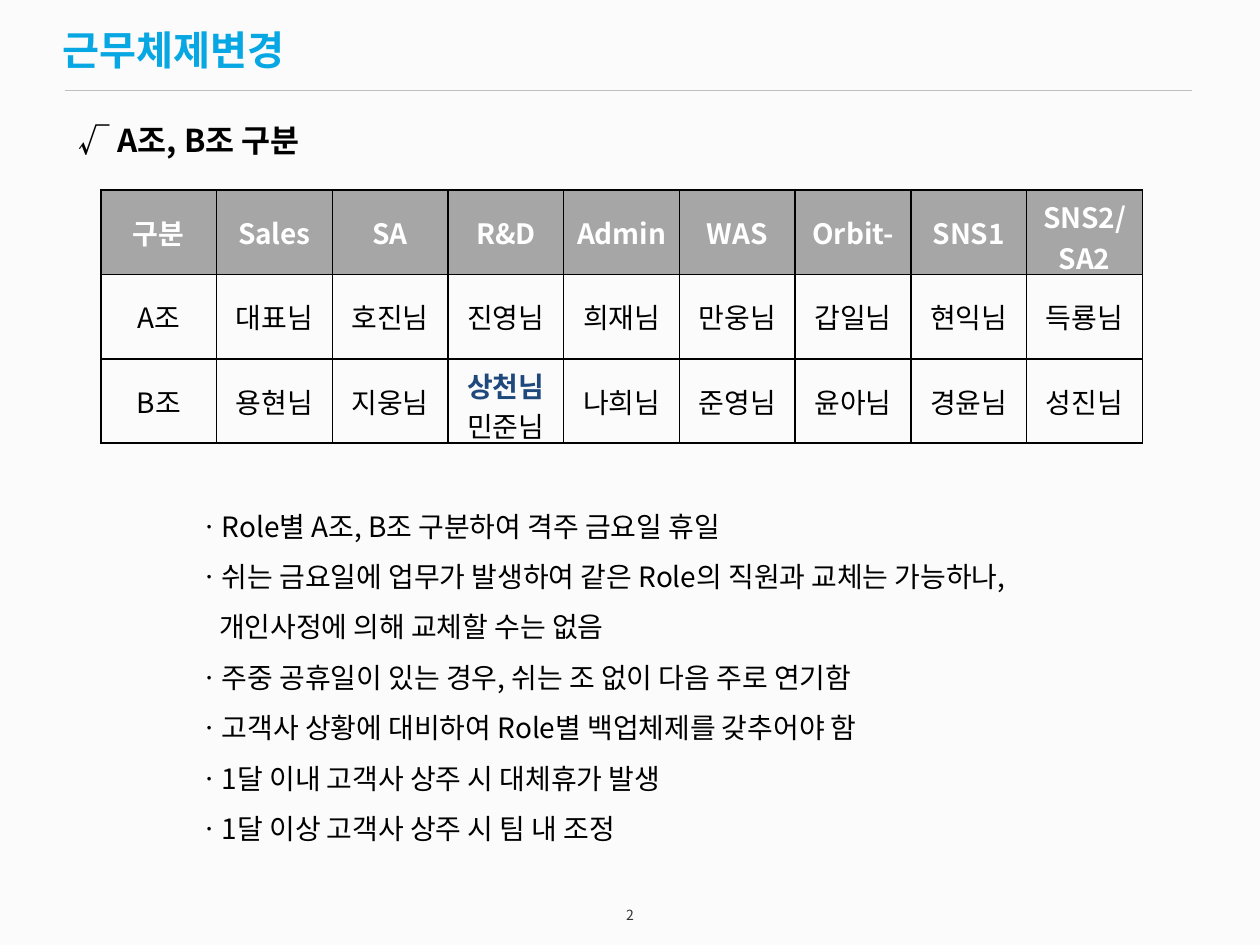
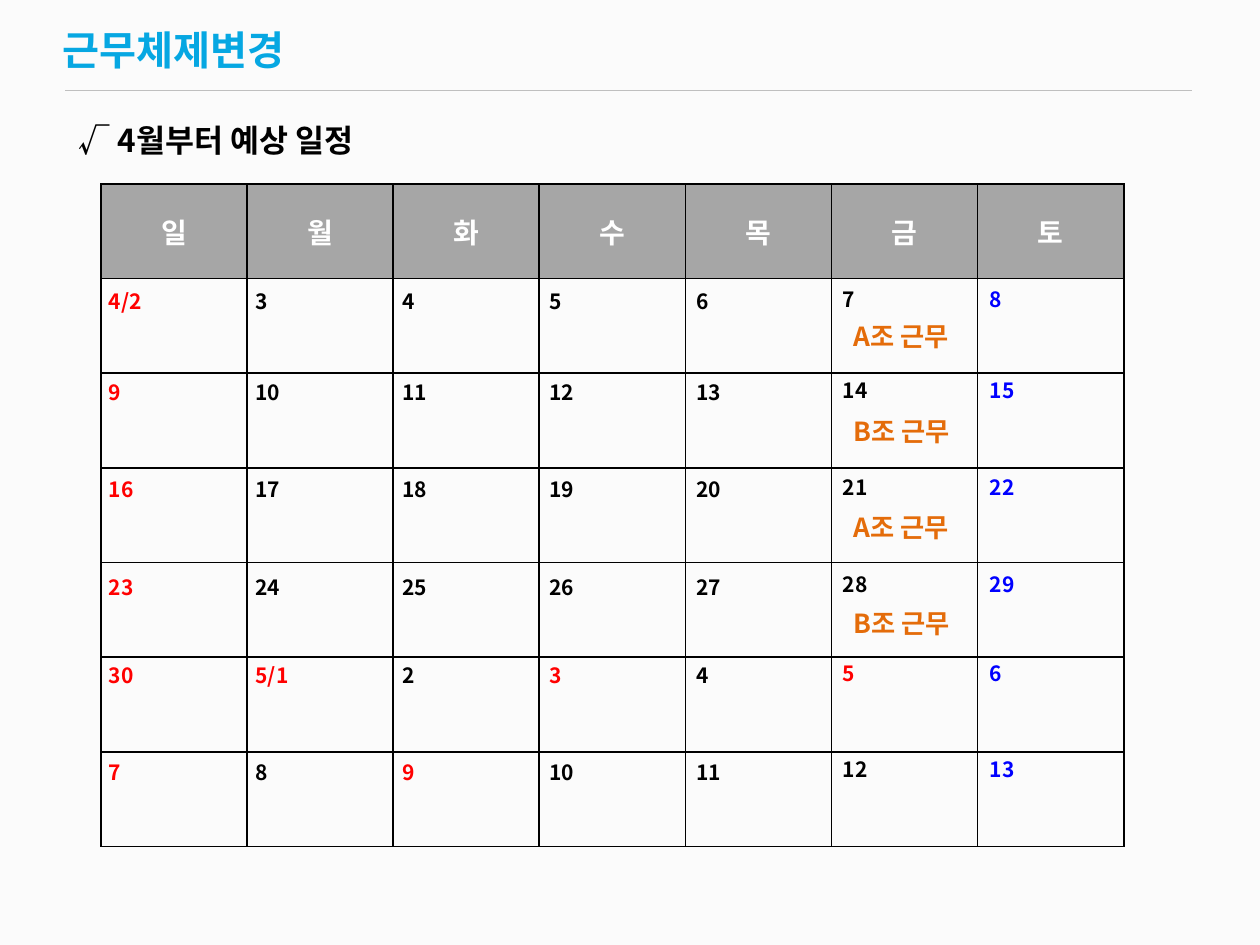
from lxml import etree
from pptx import Presentation
from pptx.dml.color import RGBColor
from pptx.enum.shapes import MSO_CONNECTOR
from pptx.enum.text import MSO_ANCHOR, PP_ALIGN
from pptx.oxml.ns import qn
from pptx.util import Pt

STRAIGHT = MSO_CONNECTOR.STRAIGHT
TOP, MIDDLE = MSO_ANCHOR.TOP, MSO_ANCHOR.MIDDLE
LEFT, CENTER = PP_ALIGN.LEFT, PP_ALIGN.CENTER

FONT = "Noto Sans CJK KR"
BACKGROUND, RULE, TITLE, HEADER = "FBFBFB", "BFBFBF", "06A7E2", "A6A6A6"
BLACK, WHITE, GRAY, NAVY = "000000", "FFFFFF", "333333", "1F497D"
RED, BLUE, ORANGE = "FF0000", "0000FF", "E46C0A"

TEAMS = [
    ["구분", "Sales", "SA", "R&D", "Admin", "WAS", "Orbit-", "SNS1", "SNS2/SA2"],
    ["A조", "대표님", "호진님", "진영님", "희재님", "만웅님", "갑일님", "현익님", "득룡님"],
    ["B조", "용현님", "지웅님", "상천님", "나희님", "준영님", "윤아님", "경윤님", "성진님"],
]
RULES = [
    "ㆍRole별 A조, B조 구분하여 격주 금요일 휴일",
    "ㆍ쉬는 금요일에 업무가 발생하여 같은 Role의 직원과 교체는 가능하나,",
    "개인사정에 의해 교체할 수는 없음",
    "ㆍ주중 공휴일이 있는 경우, 쉬는 조 없이 다음 주로 연기함",
    "ㆍ고객사 상황에 대비하여 Role별 백업체제를 갖추어야 함",
    "ㆍ1달 이내 고객사 상주 시 대체휴가 발생",
    "ㆍ1달 이상 고객사 상주 시 팀 내 조정",
]
WEEKDAYS = list("일월화수목금토")
WEEKS = [  # top of the dates, dates from Sunday to Saturday
    (161.3, ["4/2", "3", "4", "5", "6", "7", "8"]),
    (213.4, ["9", "10", "11", "12", "13", "14", "15"]),
    (268.9, ["16", "17", "18", "19", "20", "21", "22"]),
    (324.7, ["23", "24", "25", "26", "27", "28", "29"]),
    (375.1, ["30", "5/1", "2", "3", "4", "5", "6"]),
    (430.2, ["7", "8", "9", "10", "11", "12", "13"]),
]
HOLIDAYS = {"5/1", (4, 3), (4, 5), (5, 2)}  # a date, or (week, weekday)
FRIDAY, SATURDAY = 5, 6


def color(value):
    return RGBColor.from_string(value)


class Deck:
    def __init__(self):
        self.presentation = Presentation()
        self.presentation.slide_width = Pt(720)
        self.presentation.slide_height = Pt(540)
        fill = self.presentation.slide_master.background.fill
        fill.solid()
        fill.fore_color.rgb = color(BACKGROUND)
        self.slide = None

    def format_run(self, run, size, text_color, bold):
        run.font.name = FONT
        run.font.size = Pt(size)
        run.font.bold = bold
        run.font.color.rgb = color(text_color)
        east_asian = etree.SubElement(run.font._element, qn("a:ea"))
        east_asian.set("typeface", FONT)

    def text(self, lines, left, top, width, height, size, text_color=BLACK,
             bold=False, align=LEFT, anchor=TOP, inset_top=3.6, spacing=1):
        box = self.slide.shapes.add_textbox(Pt(left), Pt(top), Pt(width), Pt(height))
        frame = box.text_frame
        frame.word_wrap = True
        frame.vertical_anchor = anchor
        frame.margin_top = Pt(inset_top)
        frame.text = lines
        for paragraph in frame.paragraphs:
            paragraph.alignment = align
            paragraph.line_spacing = spacing
            for run in paragraph.runs:
                self.format_run(run, size, text_color, bold)
        return frame

    def rule(self, left, top, right):
        line = self.slide.shapes.add_connector(STRAIGHT, Pt(left), Pt(top), Pt(right), Pt(top))
        line.line.color.rgb = color(RULE)
        line.line.width = Pt(0.25)
        etree.SubElement(line._element.spPr, qn("a:effectLst"))

    def border(self, cell):
        properties = cell._tc.get_or_add_tcPr()
        for position, side in enumerate(("a:lnL", "a:lnR", "a:lnT", "a:lnB")):
            line = etree.Element(qn(side), w=str(Pt(1)))
            solid = etree.SubElement(line, qn("a:solidFill"))
            etree.SubElement(solid, qn("a:srgbClr"), val=BLACK)
            properties.insert(position, line)

    def table(self, rows, left, top, column_width, row_height):
        row_count, column_count = len(rows), len(rows[0])
        table = self.slide.shapes.add_table(
            row_count, column_count, Pt(left), Pt(top),
            Pt(column_width * column_count), Pt(row_height * row_count)).table
        table.horz_banding = False
        for column in table.columns:
            column.width = Pt(column_width)
        for row_index, values in enumerate(rows):
            table.rows[row_index].height = Pt(row_height)
            header = row_index == 0
            for column_index, value in enumerate(values):
                cell = table.cell(row_index, column_index)
                cell.vertical_anchor = MIDDLE
                if header:
                    cell.fill.solid()
                    cell.fill.fore_color.rgb = color(HEADER)
                else:
                    cell.fill.background()
                self.border(cell)
                cell.text = value
                paragraph = cell.text_frame.paragraphs[0]
                paragraph.alignment = CENTER
                for run in paragraph.runs:
                    self.format_run(run, 16, WHITE if header else BLACK, header)
        return table

    def new_slide(self, heading):
        self.slide = self.presentation.slides.add_slide(self.presentation.slide_layouts[6])
        self.rule(37.4, 51.8, 681.1)
        self.text("근무체제변경", 28.8, 0, 653, 51.8, 23, TITLE, True, inset_top=14.4)
        self.text(f"√ {heading}", 38, 65.5, 216, 41, 18, bold=True)


def build_teams(deck):
    deck.new_slide("A조, B조 구분")
    deck.text("2", 340.6, 508.3, 38.9, 28.8, 8, GRAY, align=CENTER, anchor=MIDDLE)
    table = deck.table(TEAMS, 57.6, 108.7, 66.16, 48.2)

    paragraph = table.cell(2, 3).text_frame.paragraphs[0]
    leader = paragraph.runs[0]
    leader.font.bold = True
    leader.font.color.rgb = color(NAVY)
    member = paragraph.add_run()
    member.text = "민준님"
    deck.format_run(member, 16, BLACK, False)

    frame = deck.text("\n".join(RULES), 105.1, 277.9, 544.3, 221.8, 16, spacing=1.5)
    for paragraph in frame.paragraphs:
        if not paragraph.text.startswith("ㆍ"):
            paragraph._p.get_or_add_pPr().set("marL", str(Pt(13)))


def date_color(week, weekday, date):
    if weekday == 0 or date in HOLIDAYS or (week, weekday) in HOLIDAYS:
        return RED
    return BLUE if weekday == SATURDAY else BLACK


def build_calendar(deck):
    deck.new_slide("4월부터 예상 일정")
    empty_weeks = [[""] * len(WEEKDAYS) for _ in WEEKS]
    deck.table([WEEKDAYS] + empty_weeks, 57.6, 105.1, 83.52, 54.1)
    for week, (top, dates) in enumerate(WEEKS):
        for weekday, date in enumerate(dates):
            raised = 1.4 if weekday >= FRIDAY else 0
            deck.text(date, 55.1 + 83.9 * weekday, top - raised, 72, 46, 12,
                      date_color(week, weekday, date), True)
    for week, team in enumerate("ABAB"):
        deck.text(f"{team}조 근무", 480.6, 179.3 + 54.7 * week, 86, 38.9, 15, ORANGE, True)


def main():
    deck = Deck()
    build_teams(deck)
    build_calendar(deck)
    deck.presentation.save("out.pptx")


if __name__ == "__main__":
    main()
